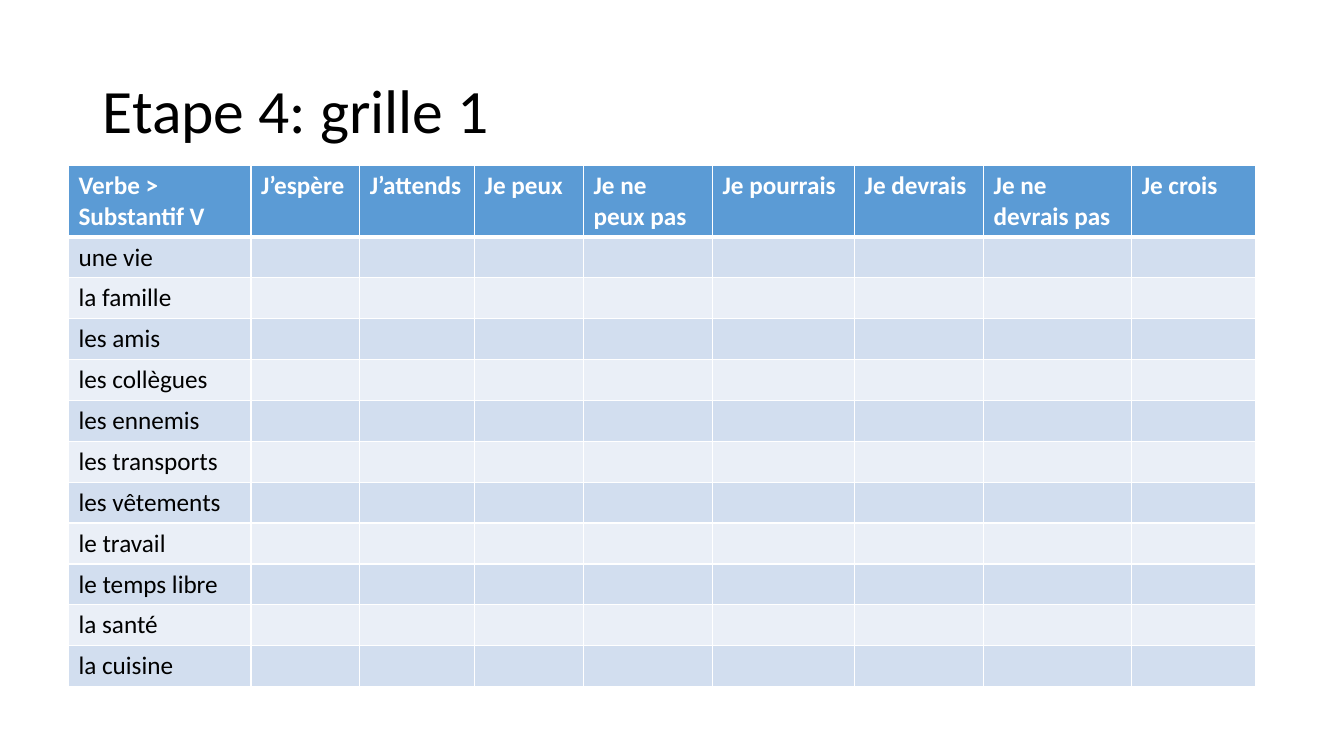
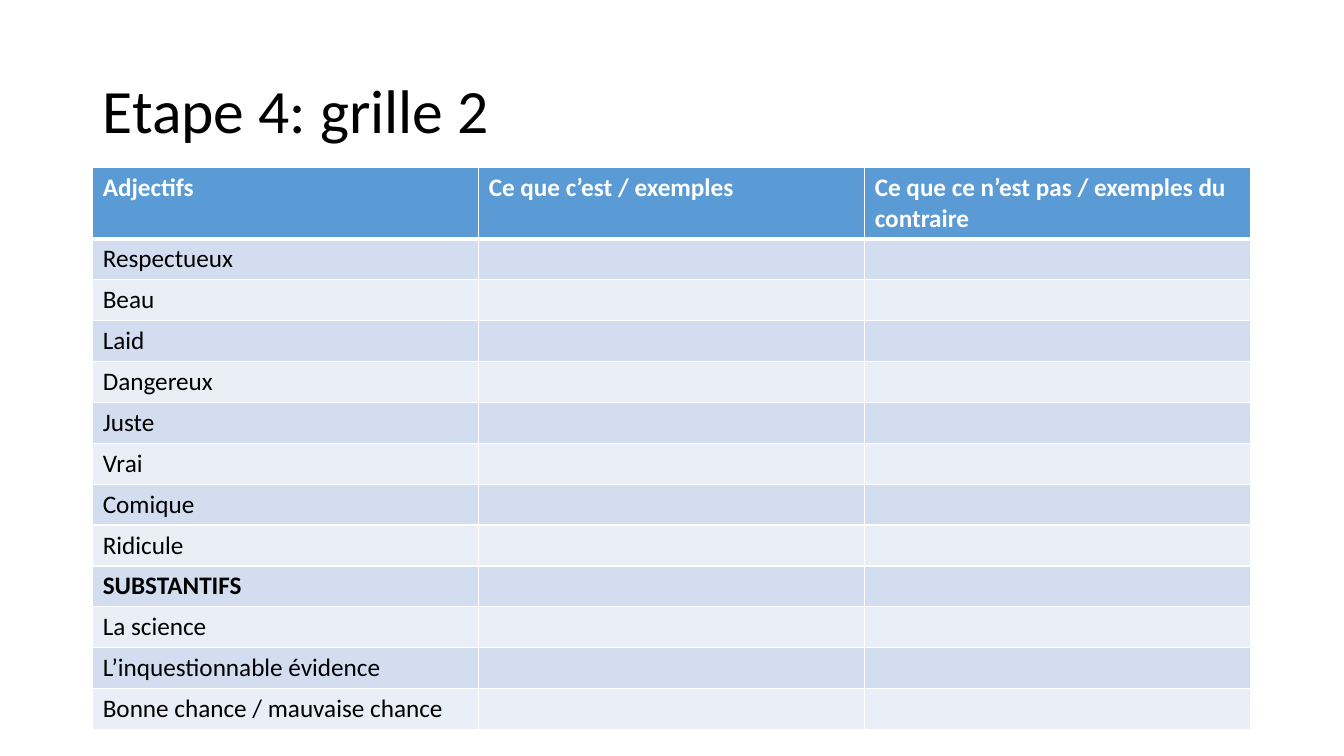
import pptx
import pptx.dml.color
import pptx.enum.text
import pptx.oxml.ns
import pptx.util
from lxml import etree

PX = 4572  # EMU; 200 px to the inch
FONT = "Calibri"
BLACK, WHITE = "000000", "FFFFFF"
HEADER_FILL = "5B9BD5"
BAND_FILLS = ("D2DEEF", "EAEFF7")
HEADER_H, ROW_H = 140, 81
THIN, THICK = 1, 3

VERBS = ["Verbe >\nSubstantif V", "J’espère", "J’attends", "Je peux", "Je ne peux pas",
         "Je pourrais", "Je devrais", "Je ne devrais pas", "Je crois"]
VERB_WIDTHS = [362, 216, 228, 216, 256, 282, 256, 294, 246]
NOUNS = ["une vie", "la famille", "les amis", "les collègues", "les ennemis",
         "les transports", "les vêtements", "le travail", "le temps libre",
         "la santé", "la cuisine"]
EXAMPLE_HEADERS = ["Adjectifs", "Ce que c’est / exemples",
                   "Ce que ce n’est pas / exemples du contraire"]
SUBHEADING = "SUBSTANTIFS"
TERMS = ["Respectueux", "Beau", "Laid", "Dangereux", "Juste", "Vrai", "Comique", "Ridicule",
         SUBHEADING, "La science", "L’inquestionnable évidence",
         "Bonne chance / mauvaise chance"]


def px(n):
    return pptx.util.Emu(n * PX)


def rgb(color):
    return pptx.dml.color.RGBColor.from_string(color)


def format_runs(tf, size, color, bold=False):
    for p in tf.paragraphs:
        for r in p.runs:
            r.font.name = FONT
            r.font.size = pptx.util.Pt(size)
            r.font.bold = bold
            r.font.color.rgb = rgb(color)


def add_title_slide(prs, title):
    """Add a title-only slide with the shared title style."""
    s = prs.slides.add_slide(prs.slide_layouts[5])
    sp = s.shapes.title
    sp.left, sp.top, sp.width, sp.height = px(184), px(80), px(2300), px(290)
    tf = sp.text_frame
    tf.text = title
    tf.auto_size = pptx.enum.text.MSO_AUTO_SIZE.NONE
    tf.vertical_anchor = pptx.enum.text.MSO_ANCHOR.MIDDLE
    p = tf.paragraphs[0]
    p.alignment = pptx.enum.text.PP_ALIGN.LEFT
    p.line_spacing = 0.9
    format_runs(tf, 44, BLACK)
    return s


def set_borders(cell, top, bottom):
    """Draw white borders, with the given top and bottom widths in points."""
    tcPr = cell._tc.get_or_add_tcPr()
    qn = pptx.oxml.ns.qn
    for side, width in (("L", THIN), ("R", THIN), ("T", top), ("B", bottom)):
        ln = etree.SubElement(tcPr, qn(f"a:ln{side}"), w=str(pptx.util.Pt(width)))
        fill = etree.SubElement(ln, qn("a:solidFill"))
        etree.SubElement(fill, qn("a:srgbClr"), val=WHITE)


def style_cell(cell, row):
    header = row == 0
    set_borders(cell, THICK if row == 1 else THIN, THICK if header else THIN)
    cell.fill.solid()
    cell.fill.fore_color.rgb = rgb(HEADER_FILL if header else BAND_FILLS[(row - 1) % 2])
    format_runs(cell.text_frame, 18, WHITE if header else BLACK,
                header or cell.text == SUBHEADING)


def add_grid(s, left, top, widths, headers, labels):
    """Add a table with a header row, row labels and empty cells to fill in."""
    height = HEADER_H + ROW_H * len(labels)
    table = s.shapes.add_table(len(labels) + 1, len(headers), px(left), px(top),
                               px(sum(widths)), px(height)).table
    for col, width in zip(table.columns, widths):
        col.width = px(width)
    for i, row in enumerate(table.rows):
        row.height = px(ROW_H if i else HEADER_H)
        texts = [labels[i - 1]] if i else headers
        for cell, text in zip(row.cells, texts):
            cell.text_frame.text = text
        for cell in row.cells:
            style_cell(cell, i)


def main():
    prs = pptx.Presentation()
    prs.slide_width, prs.slide_height = px(2667), px(1500)

    s = add_title_slide(prs, "Etape 4: grille 1")
    add_grid(s, 136, 328, VERB_WIDTHS, VERBS, NOUNS)

    s = add_title_slide(prs, "Etape 4: grille 2")
    add_grid(s, 184, 332, [766] * 3, EXAMPLE_HEADERS, TERMS)

    prs.save("out.pptx")


if __name__ == "__main__":
    main()
